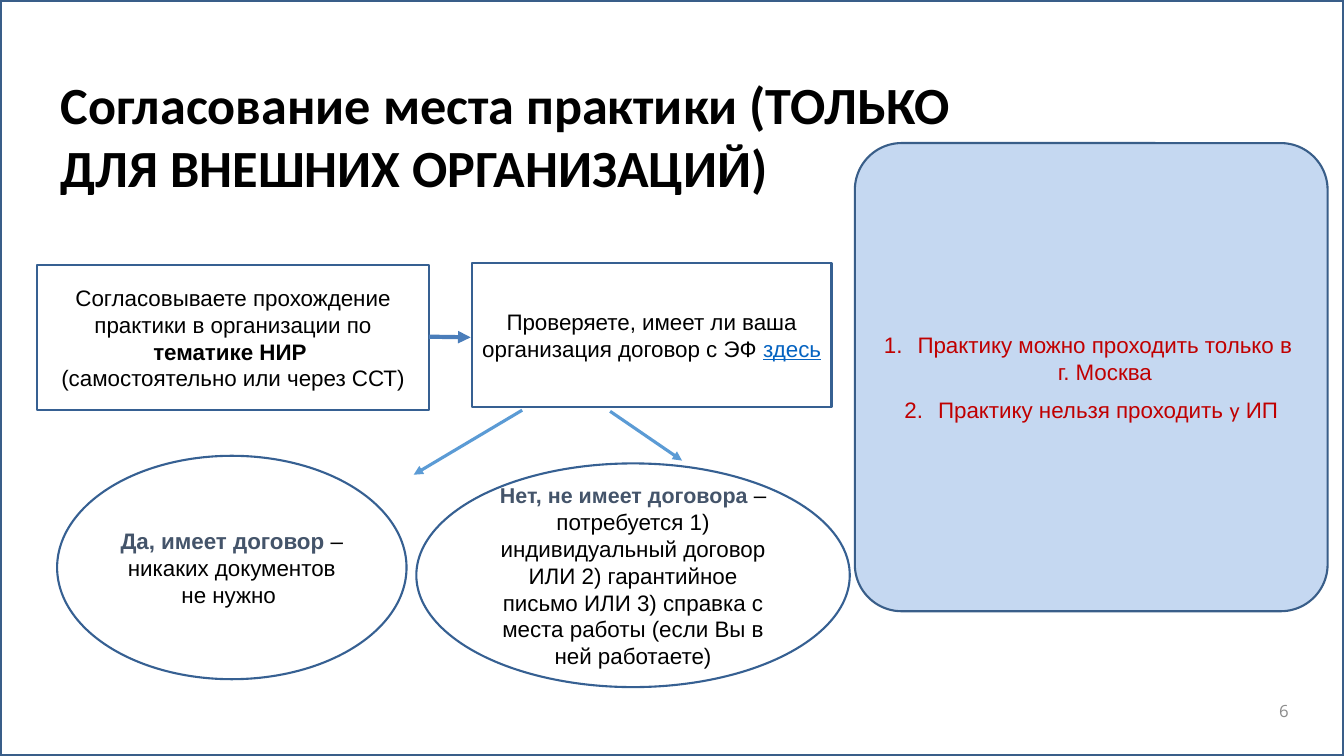
from lxml.etree import SubElement
from pptx import Presentation
from pptx.dml.color import RGBColor
from pptx.enum.shapes import MSO_CONNECTOR, MSO_SHAPE
from pptx.enum.text import MSO_ANCHOR, PP_ALIGN
from pptx.oxml.ns import qn
from pptx.util import Pt

COLORS = {
    "black": "000000", "frame": "395E89", "outline": "366092", "panel": "C5D8F1",
    "warning": "C00000", "link": "0563C1", "answer": "44546A",
    "step_arrow": "4A7DBA", "branch_arrow": "5B9BD5", "number": "8C8C8C",
}

# A run is (text, style); a style holds only what differs from the base below.
BASE = {"size": 16, "font": "Arial", "color": "black", "bold": False, "underline": False}
ANSWER = {"color": "answer", "bold": True}
WARNING = {"color": "warning"}

TITLE = [[("Согласование места практики (ТОЛЬКО ДЛЯ ВНЕШНИХ ОРГАНИЗАЦИЙ)",
           {"size": 37.3, "font": "Calibri", "bold": True})]]
PAGE_NUMBER = [[("6", {"size": 12, "font": "Open Sans", "color": "number"})]]
RULES = [
    [("Практику можно проходить только в \vг. Москва ", WARNING)],
    [("Практику нельзя проходить ", WARNING),
     ("у", {**WARNING, "font": "Calibri"}),
     (" ИП", WARNING)],
]
# Flowchart nodes: preset, (left, top, width, height), paragraphs
NODES = [
    (MSO_SHAPE.RECTANGLE, (26.5, 189.4, 280, 103.6), [
        [("Согласовываете прохождение практики в организации по ", {}),
         ("тематике НИР ", {"bold": True})],
        [("(самостоятельно или через ССТ)", {})]]),
    (MSO_SHAPE.RECTANGLE, (337, 187.9, 257, 102.6), [
        [("Проверяете, имеет ли ваша организация договор с ЭФ ", {}),
         ("здесь", {"color": "link", "underline": True})]]),
    (MSO_SHAPE.OVAL, (40.8, 325.6, 249.6, 159.6), [
        [("Да, имеет договор ", ANSWER),
         ("– никаких документов не нужно ", {})]]),
    (MSO_SHAPE.OVAL, (297.4, 331, 309.6, 159.8), [
        [("Нет, не имеет договора ", {**ANSWER, "size": 15.3}),
         ("– потребуется 1) индивидуальный договор ИЛИ 2) гарантийное письмо "
          "ИЛИ 3) справка с места работы (если Вы в ней работаете)", {})]]),
]
# Arrows: start, end, colour, width
ARROWS = [
    ((306.3, 240.5), (336.2, 241), "step_arrow", 3),
    ((373, 293), (295.5, 339.1), "branch_arrow", 2.25),
    ((435.8, 293.8), (487.2, 329), "branch_arrow", 2.25),
]


def rgb(name):
    return RGBColor.from_string(COLORS[name])


def write(frame, paragraphs, margins, align=PP_ALIGN.CENTER, anchor=MSO_ANCHOR.MIDDLE):
    """Fill a text frame; margins are (horizontal, vertical). Returns its paragraphs."""
    frame.word_wrap = True
    frame.vertical_anchor = anchor
    frame.margin_left = frame.margin_right = Pt(margins[0])
    frame.margin_top = frame.margin_bottom = Pt(margins[1])
    for index, runs in enumerate(paragraphs):
        paragraph = frame.paragraphs[0] if index == 0 else frame.add_paragraph()
        paragraph.alignment = align
        for text, changes in runs:
            style = {**BASE, **changes}
            for part, line in enumerate(text.split("\v")):
                if part:
                    paragraph.add_line_break()
                run = paragraph.add_run()
                run.text = line
                font = run.font
                font.size, font.name = Pt(style["size"]), style["font"]
                font.bold, font.underline = style["bold"], style["underline"]
                font.color.rgb = rgb(style["color"])
    return frame.paragraphs


def add_box(slide, preset, place, line, width, fill=None):
    box = slide.shapes.add_shape(preset, *map(Pt, place))
    box.shadow.inherit = False
    if fill:
        box.fill.solid()
        box.fill.fore_color.rgb = rgb(fill)
    else:
        box.fill.background()
    box.line.color.rgb = rgb(line)
    box.line.width = Pt(width)
    return box


def add_arrow(slide, start, end, color, width):
    arrow = slide.shapes.add_connector(MSO_CONNECTOR.STRAIGHT, *map(Pt, start + end))
    arrow.line.color.rgb = rgb(color)
    arrow.line.width = Pt(width)
    SubElement(arrow.line._get_or_add_ln(), qn("a:tailEnd"), type="triangle")
    SubElement(arrow._element.spPr, qn("a:effectLst"))


def number_rule(paragraph):
    paragraph.space_before = Pt(8)
    properties = paragraph._p.get_or_add_pPr()
    properties.set("marL", str(Pt(24)))
    properties.set("indent", str(Pt(-24)))
    bullet_color = SubElement(properties, qn("a:buClr"))
    SubElement(bullet_color, qn("a:srgbClr"), val=COLORS["warning"])
    SubElement(properties, qn("a:buFont"), typeface="Arial")
    SubElement(properties, qn("a:buAutoNum"), type="arabicPeriod")


def main():
    deck = Presentation()
    deck.slide_width, deck.slide_height = Pt(960), Pt(540)
    slide = deck.slides.add_slide(deck.slide_layouts[6])

    add_box(slide, MSO_SHAPE.RECTANGLE, (0, 0, 960, 540), "frame", 2.25)

    title = slide.shapes.add_textbox(*map(Pt, (28.8, 46.8, 735.8, 100)))
    heading = write(title.text_frame, TITLE, (9.6, 4.8), PP_ALIGN.LEFT, MSO_ANCHOR.TOP)[0]
    heading._p.get_or_add_pPr().set("marL", str(Pt(5)))

    panel = add_box(slide, MSO_SHAPE.ROUNDED_RECTANGLE, (610.6, 102.2, 337.7, 334.4),
                    "frame", 1.5, "panel")
    panel.adjustments[0] = 0.1
    for rule in write(panel.text_frame, RULES, (0, 0)):
        number_rule(rule)

    for preset, place, paragraphs in NODES:
        node = add_box(slide, preset, place, "outline", 1.5)
        write(node.text_frame, paragraphs, (7.2, 3.6))
    for arrow in ARROWS:
        add_arrow(slide, *arrow)

    number = slide.shapes.add_textbox(*map(Pt, (872.6, 487.4, 57.6, 41)))
    write(number.text_frame, PAGE_NUMBER, (9.6, 9.6), PP_ALIGN.RIGHT)

    deck.save("out.pptx")


if __name__ == "__main__":
    main()
